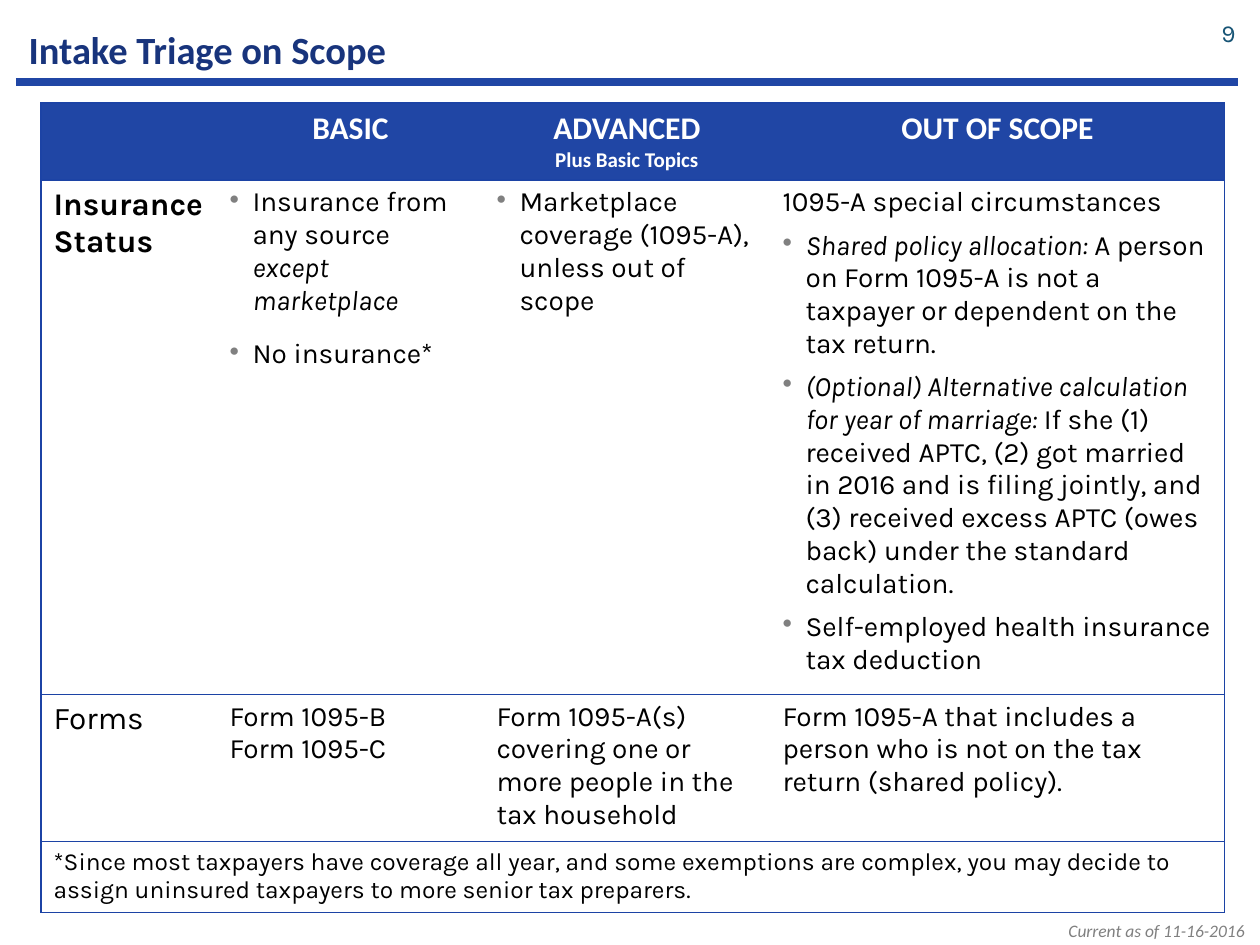
from dataclasses import dataclass

from lxml import etree
from pptx import Presentation
from pptx import util as u
from pptx.dml.color import RGBColor
from pptx.enum import shapes, text
from pptx.oxml import ns

SCALE = u.Inches(1) / 126


@dataclass(frozen=True)
class Theme:
    heading: str = "Calibri"
    body: str = "Karla"
    title: str = "18347C"
    band: str = "2046A5"
    border: str = "1C43A5"
    ink: str = "000000"
    white: str = "FFFFFF"
    muted: str = "808080"
    number: str = "175475"
    title_size: int = 22
    label_size: int = 18
    body_size: int = 16
    note_size: int = 14
    sub_size: int = 12
    footer_size: int = 10


@dataclass(frozen=True)
class Para:
    """Spans alternate plain text and, when starred, (text, italic) pairs."""
    spans: tuple
    size: int
    bullet: bool = False
    before: int = 0


def px(value):
    return u.Emu(round(value * SCALE))


def add_xml(parent, tag, **attributes):
    return etree.SubElement(parent, ns.qn(tag), attributes)


class SlideBuilder:
    def __init__(self, deck, theme):
        self.theme = theme
        self.page = deck.slides.add_slide(deck.slide_layouts[5])

    def style(self, font, size, color, name, bold=False, italic=False):
        font.size, font.name = u.Pt(size), name
        font.bold, font.italic = bold, italic
        font.color.rgb = RGBColor.from_string(color)

    def place(self, box, left, top, width, height):
        box.left, box.top, box.width, box.height = map(px, (left, top, width, height))

    def title(self, words, *area):
        box = self.page.shapes.title
        self.place(box, *area)
        frame = box.text_frame
        frame.text = words
        frame.auto_size = text.MSO_AUTO_SIZE.NONE
        frame.vertical_anchor = text.MSO_ANCHOR.MIDDLE
        frame.paragraphs[0].alignment = text.PP_ALIGN.LEFT
        self.style(frame.paragraphs[0].runs[0].font, self.theme.title_size,
                   self.theme.title, self.theme.heading, bold=True)

    def label(self, words, area, size, color, name, italic=False,
              anchor=text.MSO_ANCHOR.TOP):
        frame = self.page.shapes.add_textbox(*map(px, area)).text_frame
        frame.word_wrap = True
        frame.vertical_anchor = anchor
        frame.text = words
        frame.paragraphs[0].alignment = text.PP_ALIGN.RIGHT
        self.style(frame.paragraphs[0].runs[0].font, size, color, name, italic=italic)

    def rule(self, left, right, y, weight):
        line = self.page.shapes.add_connector(
            shapes.MSO_CONNECTOR.STRAIGHT, px(left), px(y), px(right), px(y))
        line.line.color.rgb = RGBColor.from_string(self.theme.band)
        line.line.width = u.Pt(weight)
        add_xml(line._element.spPr, "a:effectLst")

    def table(self, left, top, widths, heights, rows):
        grid = self.page.shapes.add_table(
            len(heights), len(widths), px(left), px(top),
            px(sum(widths)), px(sum(heights))).table
        grid.horz_banding = False
        for column, width in zip(grid.columns, widths):
            column.width = px(width)
        for row, height in zip(grid.rows, heights):
            row.height = px(height)
        last = len(widths) - 1
        for r, contents in enumerate(rows):
            if len(contents) == 1:
                grid.cell(r, 0).merge(grid.cell(r, last))
            for c in range(len(widths)):
                cell = grid.cell(r, c)
                sides = "TB" + "L" * (c == 0) + "R" * (c == last or cell.is_merge_origin)
                self.borders(cell, sides)
                cell.fill.solid()
                cell.fill.fore_color.rgb = RGBColor.from_string(
                    self.theme.white if r else self.theme.band)
            for c, paras in enumerate(contents):
                self.cell_text(grid.cell(r, c), paras, header=r == 0,
                               bold=r == 0 or (r == 1 and c == 0))

    def borders(self, cell, sides):
        properties = cell._tc.get_or_add_tcPr()
        for side in "LRTB":
            line = add_xml(properties, f"a:ln{side}", w=str(u.Pt(0.75)))
            if side in sides:
                fill = add_xml(line, "a:solidFill")
                add_xml(fill, "a:srgbClr", val=self.theme.border)
            else:
                add_xml(line, "a:noFill")

    def cell_text(self, cell, paras, header, bold):
        theme, frame = self.theme, cell.text_frame
        for index, item in enumerate(paras):
            para = frame.add_paragraph() if index else frame.paragraphs[0]
            if item.bullet:
                self.bullet(para)
            if index and item.before:
                para.space_before = u.Pt(item.before)
            if header:
                para.alignment = text.PP_ALIGN.CENTER
            for words, italic in item.spans:
                span = para.add_run()
                span.text = words
                self.style(span.font, item.size, theme.white if header else theme.ink,
                           theme.heading if header else theme.body, bold, italic)

    def bullet(self, para):
        properties = para._p.get_or_add_pPr()
        indent = px(23)
        properties.set("marL", str(indent))
        properties.set("indent", str(-indent))
        add_xml(add_xml(properties, "a:buClr"), "a:srgbClr", val=self.theme.muted)
        add_xml(properties, "a:buChar", char="•")


def plain(words, size=Theme.body_size):
    return Para(((words, False),), size)


def point(*spans, before=6):
    return Para(spans, Theme.body_size, True, before)


def main():
    theme = Theme()
    deck = Presentation()
    deck.slide_width, deck.slide_height = px(1260), px(945)
    slide = SlideBuilder(deck, theme)

    # Footer, heading and rule
    slide.label("Current as of 11-16-2016", (752, 914, 505, 34),
                theme.footer_size, theme.muted, theme.heading, italic=True)
    slide.rule(16, 1238, 82, 4.75)
    slide.title("Intake Triage on Scope", 16, 13, 1134, 72)

    # Scope table: one list of paragraphs per cell
    big, small = theme.label_size, theme.sub_size
    header = [
        [],
        [plain("BASIC", big)],
        [plain("ADVANCED", big), plain("Plus Basic Topics", small)],
        [plain("OUT OF SCOPE", big)],
    ]
    insurance = [
        [plain("Insurance Status", big)],
        [point(("Insurance from any source ", False), ("except marketplace", True)),
         point(("No insurance*", False), before=12)],
        [point(("Marketplace coverage (1095-A), unless out of scope", False))],
        [plain("1095-A special circumstances"),
         point(("Shared policy allocation: ", True),
               ("A person on Form 1095-A is not a taxpayer or dependent on "
                "the tax return.", False)),
         point(("(Optional) Alternative calculation for year of marriage: ", True),
               ("If she (1) received APTC, (2) got married in 2016 and is filing "
                "jointly, and (3) received excess APTC (owes back) under the "
                "standard calculation.", False)),
         point(("Self-employed health insurance tax deduction", False))],
    ]
    forms = [
        [plain("Forms", big)],
        [plain("Form 1095-B"), plain("Form 1095-C")],
        [plain("Form 1095-A(s) covering one or more people in the tax household")],
        [plain("Form 1095-A that includes a person who is not on the tax return "
               "(shared policy).")],
    ]
    note = [[plain("*Since most taxpayers have coverage all year, and some exemptions "
                   "are complex, you may decide to assign uninsured taxpayers to more "
                   "senior tax preparers.", theme.note_size)]]
    slide.table(41, 103, [176, 267, 286, 455], [77, 502, 144, 70],
                [header, insurance, forms, note])

    # Page number
    slide.label("9", (1184, 8, 64, 50), theme.note_size, theme.number, theme.body,
                anchor=text.MSO_ANCHOR.MIDDLE)

    deck.save("out.pptx")


if __name__ == "__main__":
    main()
